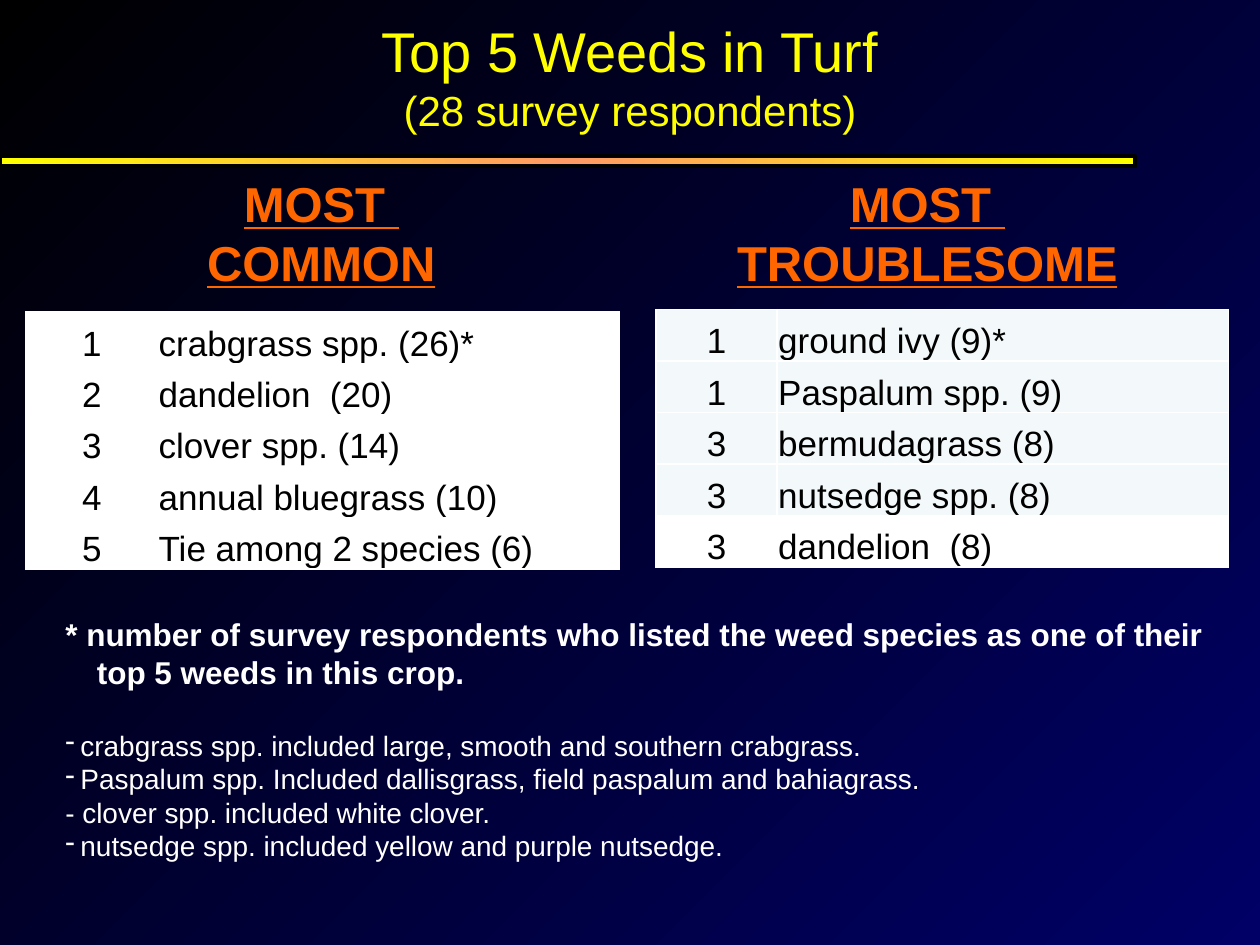
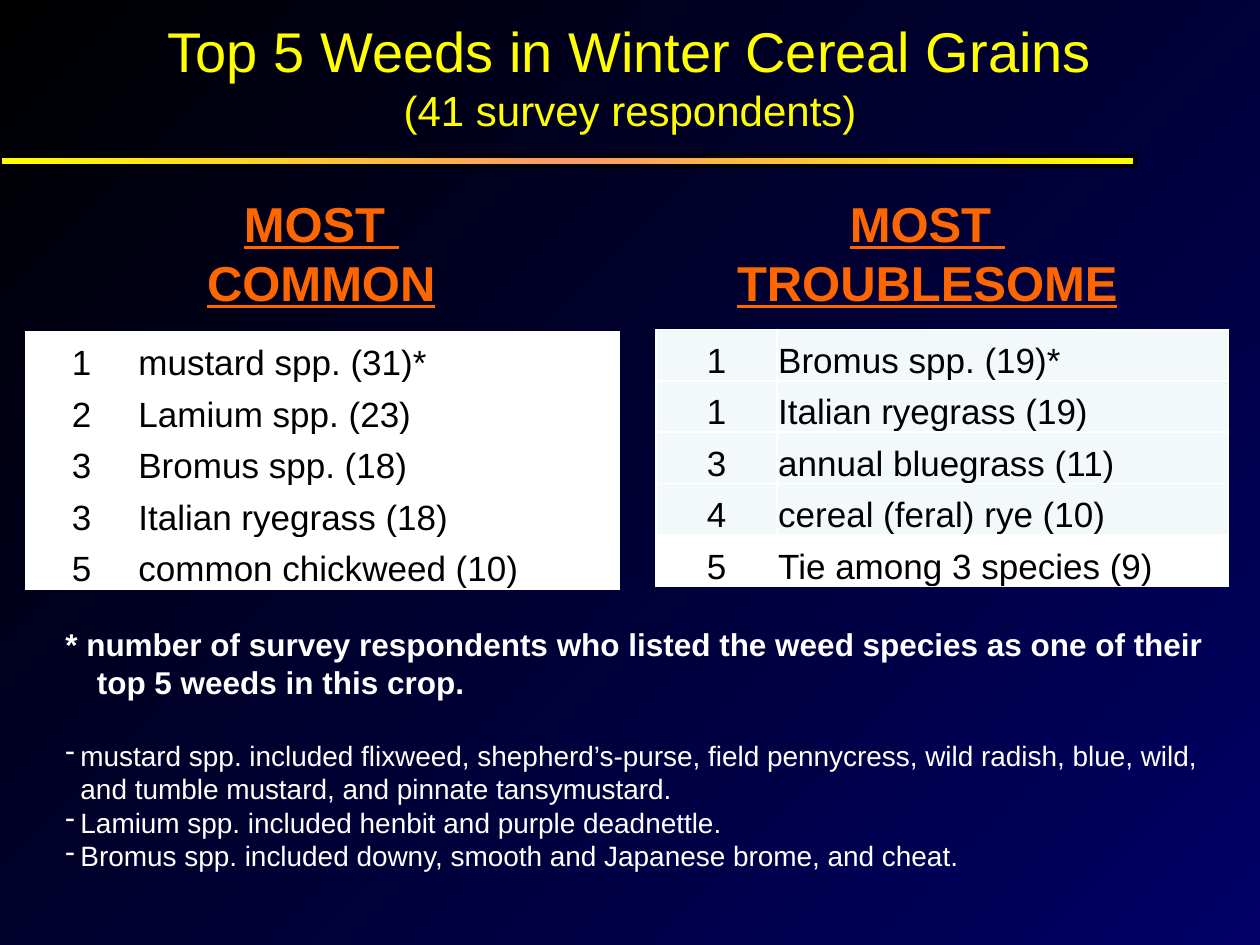
from lxml.etree import SubElement
from pptx import Presentation
from pptx.dml.color import RGBColor
from pptx.enum.shapes import MSO_SHAPE as Shape
from pptx.enum.text import MSO_ANCHOR as Anchor, MSO_AUTO_SIZE as AutoSize, PP_ALIGN as Align
from pptx.oxml.ns import qn
from pptx.util import Pt

# Shared look
FONT = "Arial"
BLACK = RGBColor(0x00, 0x00, 0x00)
WHITE = RGBColor(0xFF, 0xFF, 0xFF)
NAVY = RGBColor(0x00, 0x00, 0x66)
YELLOW = RGBColor(0xFF, 0xFF, 0x00)
PEACH = RGBColor(0xFF, 0x99, 0x66)
ORANGE = RGBColor(0xFF, 0x66, 0x00)
MIST = RGBColor(0xF3, 0xF9, 0xFA)

ROW_HEIGHT = 29.4
FOOTNOTE = ("* number of survey respondents who listed the weed species "
            "as one of their top 5 weeds in this crop.")

# Content: (rank, weed) rows and where each slide's parts start
SURVEYS = [
    dict(
        crop="Turf", respondents=28, heading_top=95.75, notes_top=347.75, rank_width=75,
        common=[(1, "crabgrass spp. (26)*"), (2, "dandelion  (20)"),
                (3, "clover spp. (14)"), (4, "annual bluegrass (10)"),
                (5, "Tie among 2 species (6)")],
        troublesome=[(1, "ground ivy (9)*"), (1, "Paspalum spp. (9)"),
                     (3, "bermudagrass (8)"), (3, "nutsedge spp. (8)"),
                     (3, "dandelion  (8)")],
        notes=["crabgrass spp. included large, smooth and southern crabgrass.",
               "Paspalum spp. Included dallisgrass, field paspalum and bahiagrass.",
               "- clover spp. included white clover.",
               "nutsedge spp. included yellow and purple nutsedge."],
    ),
    dict(
        crop="Winter Cereal Grains", respondents=41, heading_top=107, notes_top=353.5,
        rank_width=63.4,
        common=[(1, "mustard spp. (31)*"), (2, "Lamium spp. (23)"),
                (3, "Bromus spp. (18)"), (3, "Italian ryegrass (18)"),
                (5, "common chickweed (10)")],
        troublesome=[(1, "Bromus spp. (19)*"), (1, "Italian ryegrass (19)"),
                     (3, "annual bluegrass (11)"), (4, "cereal (feral) rye (10)"),
                     (5, "Tie among 3 species (9)")],
        notes=["mustard spp. included flixweed, shepherd’s-purse, field pennycress, "
               "wild radish, blue, wild, and tumble mustard, and pinnate tansymustard.",
               "Lamium spp. included henbit and purple deadnettle.",
               "Bromus spp. included downy, smooth and Japanese brome, and cheat."],
    ),
]


def write(frame, text, size=18, color=WHITE, bold=False, underline=False,
          align=Align.LEFT, indent=0, bullet=None, before=0):
    """Fill the frame's empty first paragraph, or add another one."""
    para = frame.paragraphs[0] if not frame.text else frame.add_paragraph()
    para.alignment = align
    para.space_before = Pt(before)
    span = para.add_run()
    span.text = text
    font = span.font
    font.name, font.size, font.bold, font.underline = FONT, Pt(size), bold, underline
    font.color.rgb = color
    if indent:
        props = para._p.get_or_add_pPr()
        props.set("marL", str(Pt(indent)))
        props.set("indent", str(-Pt(indent)))
        if bullet:
            SubElement(props, qn("a:buChar"), char=bullet)


def add_box(page, left, top, width, height, wrap=True, grow=True, anchor=Anchor.TOP):
    frame = page.shapes.add_textbox(Pt(left), Pt(top), Pt(width), Pt(height)).text_frame
    frame.word_wrap = wrap
    frame.auto_size = AutoSize.SHAPE_TO_FIT_TEXT if grow else AutoSize.NONE
    frame.vertical_anchor = anchor
    return frame


def set_gradient(fill, owner, colors, angle):
    """Spread the colours evenly; owner is the element that holds the fill."""
    fill.gradient()
    fill.gradient_angle = angle
    stops = next(owner.iter(qn("a:gsLst")))
    stops.clear()
    for index, color in enumerate(colors):
        position = 100000 * index // (len(colors) - 1)
        stop = SubElement(stops, qn("a:gs"), pos=str(position))
        SubElement(stop, qn("a:srgbClr"), val=str(color))


def add_title(page, crop, respondents):
    frame = add_box(page, 24, 0, 672, 86.4, grow=False, anchor=Anchor.MIDDLE)
    write(frame, f"Top 5 Weeds in {crop}", size=32, color=YELLOW, align=Align.CENTER)
    write(frame, f"({respondents} survey respondents)", size=24, color=YELLOW,
          align=Align.CENTER)


def add_rule(page):
    rule = page.shapes.add_shape(Shape.RECTANGLE, 0, Pt(89.3), Pt(648.7), Pt(5.75))
    rule.shadow.inherit = False
    set_gradient(rule.fill, rule.element, [YELLOW, PEACH, YELLOW], 0)
    rule.line.color.rgb = BLACK
    rule.line.width = Pt(2.25)


def add_heading(page, word, left, top, width, wrap):
    frame = add_box(page, left, top, width, 75, wrap=wrap)
    for line in ("MOST ", word):
        write(frame, line, size=28, color=ORANGE, bold=True, underline=True,
              align=Align.CENTER)


def set_cell(cell, text, align, fill):
    cell.margin_left = cell.margin_top = cell.margin_right = Pt(0.7)
    cell.margin_bottom = 0
    cell.vertical_anchor = Anchor.BOTTOM
    write(cell.text_frame, text, size=20, color=BLACK, align=align)
    props = cell._tc.get_or_add_tcPr()
    for side in ("lnL", "lnR", "lnT", "lnB"):
        border = SubElement(props, qn(f"a:{side}"), w=str(Pt(1)))
        SubElement(SubElement(border, qn("a:solidFill")), qn("a:srgbClr"), val=str(WHITE))
    cell.fill.solid()
    cell.fill.fore_color.rgb = fill


def add_ranking(page, rows, left, top, widths, fill):
    """A table of ranks and weeds; the last row is always white."""
    table = page.shapes.add_table(len(rows), 2, Pt(left), Pt(top), Pt(sum(widths)),
                                  Pt(ROW_HEIGHT * len(rows))).table
    table.first_row = table.horz_banding = False
    for column, width in zip(table.columns, widths):
        column.width = Pt(width)
    for index, (rank, weed) in enumerate(rows):
        table.rows[index].height = Pt(ROW_HEIGHT)
        row_fill = WHITE if index == len(rows) - 1 else fill
        set_cell(table.cell(index, 0), str(rank), Align.CENTER, row_fill)
        set_cell(table.cell(index, 1), weed, Align.LEFT, row_fill)


def add_notes(page, notes, top):
    frame = add_box(page, 30.25, top, 666, 150.5)
    write(frame, FOOTNOTE, bold=True, indent=18)
    for index, note in enumerate(notes):
        typed_dash = note.startswith("-")
        write(frame, note, size=16, indent=0 if typed_dash else 8.65, bullet="-",
              before=0 if index else 21.6)


def add_survey(deck, survey):
    page = deck.slides.add_slide(deck.slide_layouts[6])
    set_gradient(page.background.fill, page.element, [BLACK, NAVY], 315)
    add_title(page, survey["crop"], survey["respondents"])
    add_rule(page)

    # Two columns: heading above ranking
    heading_top = survey["heading_top"]
    table_top = heading_top + 82.5
    rank_width = survey["rank_width"]
    add_heading(page, "COMMON", 97.2, heading_top, 172.8, wrap=True)
    add_heading(page, "TROUBLESOME", 412.5, heading_top, 234.75, wrap=False)
    add_ranking(page, survey["common"], 15, table_top, [rank_width, 339 - rank_width], WHITE)
    add_ranking(page, survey["troublesome"], 375, table_top - 1.3, [69, 258], MIST)

    add_notes(page, survey["notes"], survey["notes_top"])


def main():
    deck = Presentation()
    deck.slide_width, deck.slide_height = Pt(720), Pt(540)
    for survey in SURVEYS:
        add_survey(deck, survey)
    deck.save("out.pptx")


if __name__ == "__main__":
    main()
